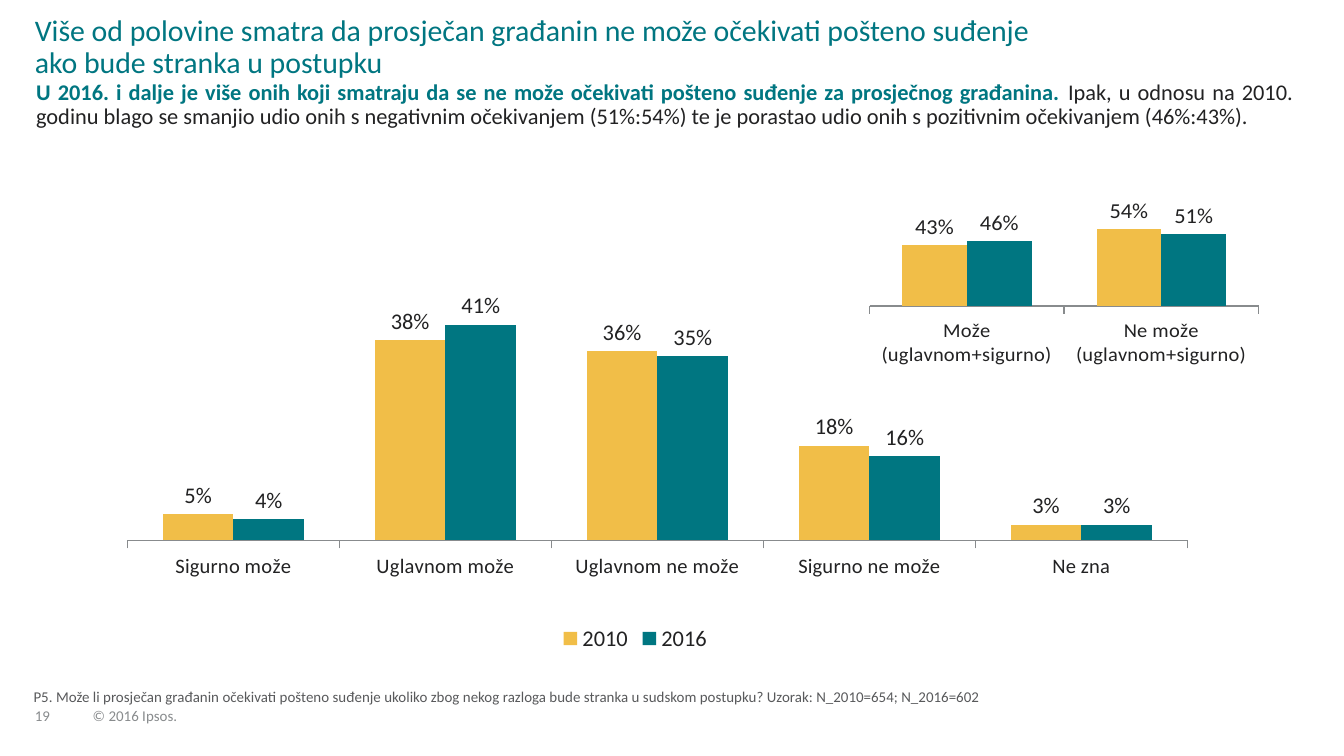
import dataclasses
import typing

import pptx
import pptx.chart.data
import pptx.dml.color
import pptx.enum.chart
import pptx.enum.text
import pptx.oxml
import pptx.oxml.ns
import pptx.util

PX = 4572
FONT = "Calibri"
GOLD = pptx.dml.color.RGBColor(0xF1, 0xBE, 0x48)
TEAL = pptx.dml.color.RGBColor(0x00, 0x76, 0x81)
INK = pptx.dml.color.RGBColor(0x22, 0x22, 0x23)
FOOTNOTE_GREY = pptx.dml.color.RGBColor(0x58, 0x59, 0x5B)
FOOTER_GREY = pptx.dml.color.RGBColor(0x88, 0x8B, 0x8D)
TOP = pptx.enum.text.MSO_ANCHOR.TOP
BOTTOM = pptx.enum.text.MSO_ANCHOR.BOTTOM
LEFT = pptx.enum.text.PP_ALIGN.LEFT
JUSTIFY = pptx.enum.text.PP_ALIGN.JUSTIFY


class Box(typing.NamedTuple):
    left: int
    top: int
    width: int
    height: int

    def emu(self) -> list[int]:
        return [length * PX for length in self]


class Phrase(typing.NamedTuple):
    text: str
    color: pptx.dml.color.RGBColor
    bold: bool = False


@dataclasses.dataclass(frozen=True)
class ColumnChart:
    box: Box
    categories: list[str]
    series: dict[str, list[float]]
    plot: dict[str, float]
    maximum: float
    legend: bool = False


CHARTS = [
    ColumnChart(
        Box(124, 380, 1644, 598),
        ["Sigurno može", "Uglavnom može", "Uglavnom ne može", "Sigurno ne može", "Ne zna"],
        {"2010": [0.05, 0.38, 0.36, 0.18, 0.03], "2016": [0.04, 0.41, 0.35, 0.16, 0.03]},
        {"x": 0.04, "y": 0.12, "w": 0.96, "h": 0.59},
        0.45,
        legend=True,
    ),
    ColumnChart(
        Box(1270, 296, 604, 250),
        ["Može (uglavnom+sigurno)", "Ne može (uglavnom+sigurno)"],
        {"Series 1": [0.43, 0.54], "Series 2": [0.46, 0.51]},
        {"x": 0.04, "y": 0, "w": 0.96, "h": 0.64},
        0.72,
    ),
]


def add_text(slide, box: Box, *phrases: Phrase, size: int, anchor=TOP, align=LEFT,
             spacing: float = 1.0, inset: tuple[int, int] = (0, 0), wrap: bool = True) -> None:
    frame = slide.shapes.add_textbox(*box.emu()).text_frame
    frame.word_wrap = wrap
    frame.vertical_anchor = anchor
    frame.margin_left = frame.margin_right = inset[0] * PX
    frame.margin_top = frame.margin_bottom = inset[1] * PX
    paragraph = frame.paragraphs[0]
    paragraph.alignment = align
    paragraph.line_spacing = spacing
    for phrase in phrases:
        run = paragraph.add_run()
        run.text = phrase.text
        run.font.name = FONT
        run.font.size = pptx.util.Pt(size)
        run.font.bold = phrase.bold
        run.font.color.rgb = phrase.color


def style_font(font, size: int) -> None:
    font.name = FONT
    font.size = pptx.util.Pt(size)
    font.color.rgb = INK


def place_plot(chart, plot: dict[str, float]) -> None:
    area = chart.plots[0]._element.getparent()
    for old in area.findall(pptx.oxml.ns.qn("c:layout")):
        area.remove(old)
    sizes = "".join(f'<c:{key} val="{value}"/>' for key, value in plot.items())
    area.insert(0, pptx.oxml.parse_xml(
        f'<c:layout {pptx.oxml.ns.nsdecls("c")}><c:manualLayout>'
        '<c:layoutTarget val="inner"/><c:xMode val="edge"/><c:yMode val="edge"/>'
        f'{sizes}</c:manualLayout></c:layout>'))


def add_columns(slide, columns: ColumnChart) -> None:
    shares = pptx.chart.data.CategoryChartData(number_format="0%")
    shares.categories = columns.categories
    for name, values in columns.series.items():
        shares.add_series(name, values)
    chart = slide.shapes.add_chart(
        pptx.enum.chart.XL_CHART_TYPE.COLUMN_CLUSTERED, *columns.box.emu(), shares).chart
    style_font(chart.font, 18)
    chart.has_title = False
    chart.has_legend = columns.legend
    if columns.legend:
        chart.legend.position = pptx.enum.chart.XL_LEGEND_POSITION.BOTTOM
        chart.legend.include_in_layout = False
        style_font(chart.legend.font, 12)

    value_axis = chart.value_axis
    value_axis.minimum_scale = 0
    value_axis.maximum_scale = columns.maximum
    value_axis.has_major_gridlines = False
    value_axis.visible = False
    category_axis = chart.category_axis
    category_axis.major_tick_mark = pptx.enum.chart.XL_TICK_MARK.OUTSIDE
    category_axis.format.line.color.rgb = FOOTER_GREY
    style_font(category_axis.tick_labels.font, 11)

    bars = chart.plots[0]
    bars.gap_width = 100
    bars.overlap = 0
    bars.vary_by_categories = False
    for series, color in zip(bars.series, (GOLD, TEAL)):
        series.format.fill.solid()
        series.format.fill.fore_color.rgb = color
        series.invert_if_negative = False
        labels = series.data_labels
        labels.show_value = True
        labels.number_format = "0%"
        labels.number_format_is_linked = False
        labels.position = pptx.enum.chart.XL_LABEL_POSITION.OUTSIDE_END
        style_font(labels.font, 12)
    place_plot(chart, columns.plot)


def main() -> None:
    deck = pptx.Presentation()
    deck.slide_width = 2000 * PX
    deck.slide_height = 1125 * PX
    slide = deck.slides.add_slide(deck.slide_layouts[6])

    add_text(slide, Box(52, 1027, 68, 52), Phrase("19", FOOTER_GREY),
             size=8, anchor=BOTTOM, spacing=0.85, wrap=False)
    add_text(slide, Box(138, 1042, 152, 36), Phrase("© 2016 Ipsos.", FOOTER_GREY),
             size=8, anchor=BOTTOM, spacing=0.85, wrap=False)
    add_text(slide, Box(50, 1010, 1586, 40), Phrase(
        "P5. Može li prosječan građanin očekivati pošteno suđenje ukoliko zbog nekog razloga "
        "bude stranka u sudskom postupku? Uzorak: N_2010=654; N_2016=602", FOOTNOTE_GREY),
        size=8, anchor=BOTTOM)
    add_text(slide, Box(34, 111, 1910, 92),
             Phrase("U 2016. i dalje je više onih koji smatraju da se ne može očekivati "
                    "pošteno suđenje za prosječnog građanina. ", TEAL, bold=True),
             Phrase("Ipak, u odnosu na 2010. godinu blago se smanjio udio onih s negativnim "
                    "očekivanjem (51%:54%) te je porastao udio onih s pozitivnim "
                    "očekivanjem (46%:43%).", INK),
             size=12, align=JUSTIFY, spacing=0.9, inset=(20, 10))
    add_text(slide, Box(52, 23, 1552, 96), Phrase(
        "Više od polovine smatra da prosječan građanin ne može očekivati pošteno suđenje "
        "ako bude stranka u postupku", TEAL), size=16, spacing=0.9)
    for columns in CHARTS:
        add_columns(slide, columns)
    deck.save("out.pptx")


if __name__ == "__main__":
    main()
